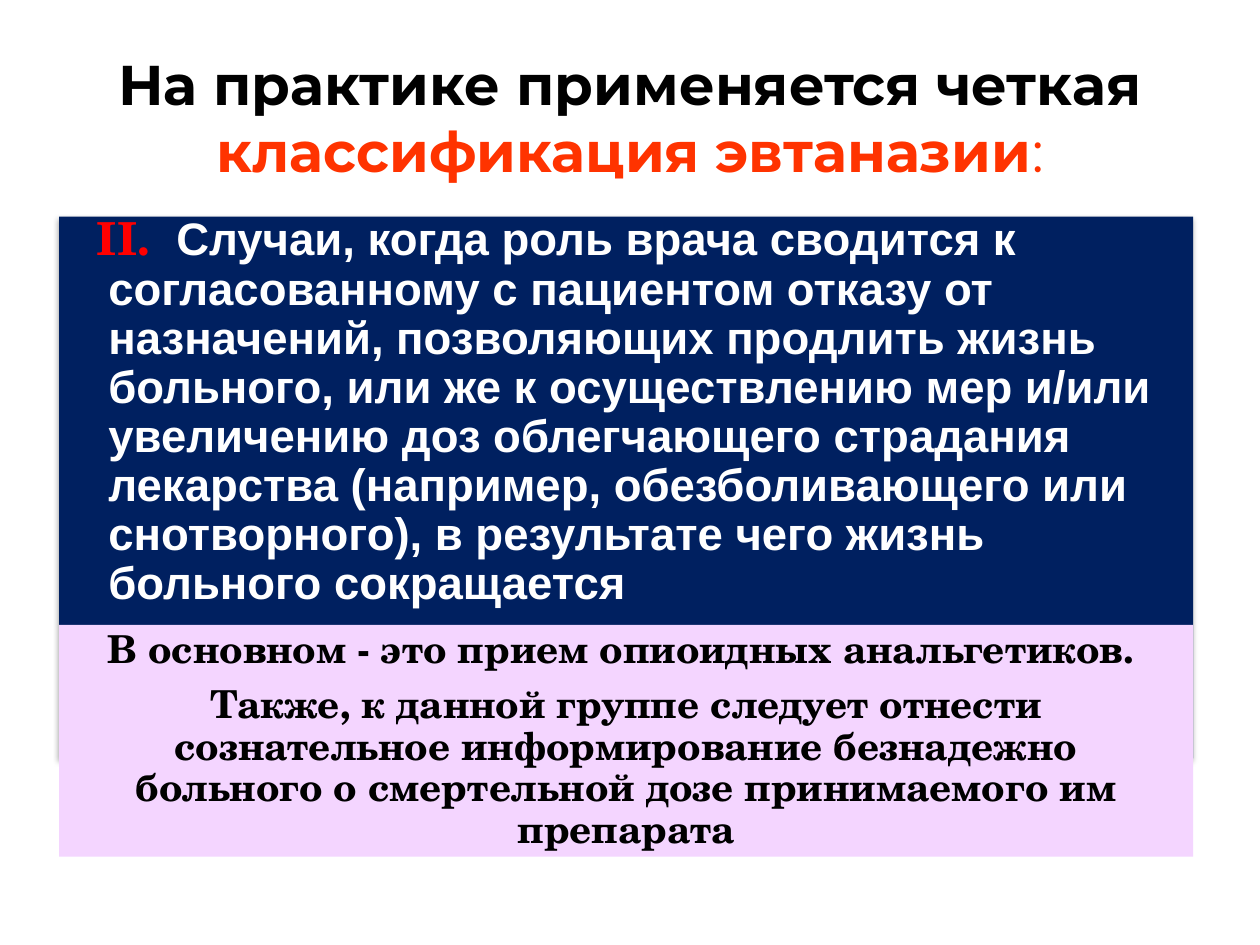
from lxml import etree
from pptx import Presentation
from pptx.dml.color import RGBColor
from pptx.enum.shapes import MSO_SHAPE
from pptx.enum.text import MSO_ANCHOR, PP_ALIGN
from pptx.oxml.ns import qn
from pptx.util import Inches, Pt

RECTANGLE = MSO_SHAPE.RECTANGLE
TOP, MIDDLE = MSO_ANCHOR.TOP, MSO_ANCHOR.MIDDLE
LEFT, CENTER = PP_ALIGN.LEFT, PP_ALIGN.CENTER

THEME = {
    "title": {"name": "Montserrat", "size": Pt(32), "bold": True, "color": "000000"},
    "accent": {"name": "Montserrat", "size": Pt(32), "bold": True, "color": "FF3300"},
    "accent_light": {"name": "Montserrat", "size": Pt(32), "bold": False, "color": "FF3300"},
    "numeral": {"name": "TeX Gyre Schola", "size": Pt(26), "bold": True, "color": "FF0000"},
    "case": {"name": "Arial", "size": Pt(26), "bold": True, "color": "FFFFFF"},
    "comment": {"name": "TeX Gyre Schola", "size": Pt(22), "bold": True, "color": "000000"},
    "case_fill": "002060",
    "comment_fill": "F4D5FF",
}

# Each paragraph is a list of (text, style) spans.
TITLE = [[
    ("На практике применяется четкая ", "title"),
    ("классификация эвтаназии", "accent"),
    (":", "accent_light"),
]]
CASE = [[
    ("II.  ", "numeral"),
    ("Случаи, когда роль врача сводится к согласованному с пациентом отказу от "
     "назначений, позволяющих продлить жизнь больного, или же к осуществлению мер "
     "и/или увеличению доз облегчающего страдания лекарства (например, "
     "обезболивающего или снотворного), в результате чего жизнь больного "
     "сокращается", "case"),
]]
COMMENT = [
    [("В основном - это прием опиоидных анальгетиков. ", "comment")],
    [("Также, к данной группе следует отнести сознательное информирование "
      "безнадежно больного о смертельной дозе принимаемого им препарата", "comment")],
]

PANEL_LEFT, PANEL_WIDTH = 0.47, 9
CASE_TOP, CASE_HEIGHT = 1.72, 4.3
COMMENT_TOP, COMMENT_HEIGHT = 4.96, 1.84


def write_text(frame, paragraphs, anchor, insets, **para_format):
    frame.word_wrap = True
    frame.vertical_anchor = anchor
    for side, inset in zip(("left", "top", "right", "bottom"), insets):
        setattr(frame, f"margin_{side}", Inches(inset))
    for index, spans in enumerate(paragraphs):
        para = frame.add_paragraph() if index else frame.paragraphs[0]
        for name, value in para_format.items():
            setattr(para, name, value)
        for text, style in spans:
            span = para.add_run()
            span.text = text
            for name, value in THEME[style].items():
                if name == "color":
                    span.font.color.rgb = RGBColor.from_string(value)
                else:
                    setattr(span.font, name, value)


def add_panel(page, top, height, fill):
    panel = page.shapes.add_shape(
        RECTANGLE, Inches(PANEL_LEFT), Inches(top), Inches(PANEL_WIDTH), Inches(height))
    panel.shadow.inherit = False
    panel.fill.solid()
    panel.fill.fore_color.rgb = RGBColor.from_string(fill)
    panel.line.fill.background()
    return panel


def add_soft_shadow(shape):
    effects = shape._element.spPr.find(qn("a:effectLst"))
    shadow = etree.SubElement(
        effects, qn("a:outerShdw"), blurRad=str(Pt(3.1)), dist=str(Pt(1.8)),
        dir="5400000", rotWithShape="0")
    color = etree.SubElement(shadow, qn("a:srgbClr"), val="000000")
    etree.SubElement(color, qn("a:alpha"), val="35000")


def main():
    deck = Presentation()
    deck.slide_width, deck.slide_height = Inches(10), Inches(7.5)
    page = deck.slides.add_slide(deck.slide_layouts[5])

    title = page.shapes.title
    title.left, title.top = Inches(0.5), Inches(0.3)
    title.width, title.height = Inches(9), Inches(1.25)
    write_text(title.text_frame, TITLE, MIDDLE, (0.1, 0.05, 0.1, 0.05), alignment=CENTER)

    case = add_panel(page, CASE_TOP, CASE_HEIGHT, THEME["case_fill"])
    add_soft_shadow(case)
    write_text(case.text_frame, CASE, TOP, (0.2, 0, 0.2, 0),
               alignment=LEFT, line_spacing=0.9)
    indents = case.text_frame.paragraphs[0]._p.get_or_add_pPr()
    indents.set("marL", str(Inches(0.19)))
    indents.set("indent", str(Inches(-0.09)))

    comment = add_panel(page, COMMENT_TOP, COMMENT_HEIGHT, THEME["comment_fill"])
    write_text(comment.text_frame, COMMENT, MIDDLE, (0.17, 0.03, 0.17, 0.03),
               alignment=CENTER, line_spacing=0.9, space_after=Pt(8))

    deck.save("out.pptx")


if __name__ == "__main__":
    main()
